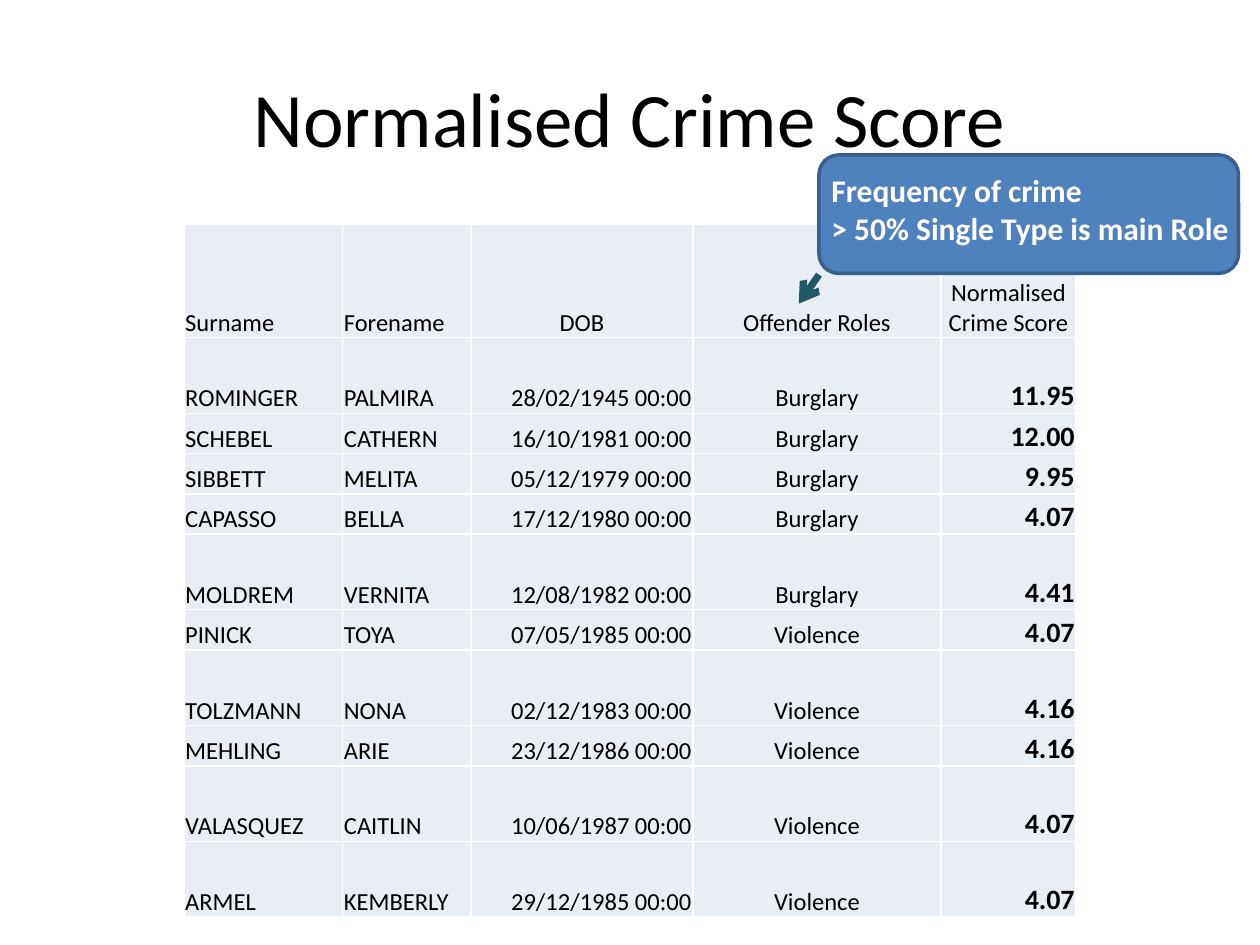
from lxml import etree
from pptx import Presentation
from pptx.dml.color import RGBColor
from pptx.enum.shapes import MSO_CONNECTOR, MSO_SHAPE
from pptx.enum.text import MSO_ANCHOR as ANCHOR, PP_ALIGN as ALIGN
from pptx.oxml.ns import qn
from pptx.util import Inches, Pt


def color(hex_code):
    return RGBColor.from_string(hex_code)


def write(frame, text, size=14, bold=False, ink="000000", align=ALIGN.LEFT):
    """Fill a text frame, one paragraph for each line of text."""
    for index, line in enumerate(text.split("\n")):
        paragraph = frame.add_paragraph() if index else frame.paragraphs[0]
        paragraph.alignment = align
        run = paragraph.add_run()
        run.text = line
        run.font.name = "Calibri"
        run.font.size = Pt(size)
        run.font.bold = bold
        run.font.color.rgb = color(ink)


prs = Presentation()
prs.slide_width, prs.slide_height = Inches(10), Inches(7.5)
slide = prs.slides.add_slide(prs.slide_layouts[6])
shapes = slide.shapes

title = shapes.add_textbox(Inches(0.5), Inches(0.3), Inches(9), Inches(1.25)).text_frame
title.word_wrap = True
title.vertical_anchor = ANCHOR.MIDDLE
write(title, "Normalised Crime Score", size=44, align=ALIGN.CENTER)

# Offender table
HEADER = ["Surname", "Forename", "DOB", "Offender Roles", "Normalised Crime Score"]
OFFENDERS = [
    ("ROMINGER", "PALMIRA", "28/02/1945 00:00", "Burglary", "11.95"),
    ("SCHEBEL", "CATHERN", "16/10/1981 00:00", "Burglary", "12.00"),
    ("SIBBETT", "MELITA", "05/12/1979 00:00", "Burglary", "9.95"),
    ("CAPASSO", "BELLA", "17/12/1980 00:00", "Burglary", "4.07"),
    ("MOLDREM", "VERNITA", "12/08/1982 00:00", "Burglary", "4.41"),
    ("PINICK", "TOYA", "07/05/1985 00:00", "Violence", "4.07"),
    ("TOLZMANN", "NONA", "02/12/1983 00:00", "Violence", "4.16"),
    ("MEHLING", "ARIE", "23/12/1986 00:00", "Violence", "4.16"),
    ("VALASQUEZ", "CAITLIN", "10/06/1987 00:00", "Violence", "4.07"),
    ("ARMEL", "KEMBERLY", "29/12/1985 00:00", "Violence", "4.07"),
]
COLUMN_WIDTHS = [1.26, 1.02, 1.76, 1.97, 1.07]
ROW_HEIGHTS = [0.9, 0.6, 0.32, 0.32, 0.32, 0.6, 0.32, 0.6, 0.32, 0.6, 0.6]
HEADER_ALIGNS = [ALIGN.LEFT, ALIGN.LEFT, ALIGN.CENTER, ALIGN.CENTER, ALIGN.CENTER]
BODY_ALIGNS = [ALIGN.LEFT, ALIGN.LEFT, ALIGN.RIGHT, ALIGN.CENTER, ALIGN.RIGHT]

scores = shapes.add_table(len(ROW_HEIGHTS), len(COLUMN_WIDTHS), Inches(1.46), Inches(1.78),
                          Inches(sum(COLUMN_WIDTHS)), Inches(sum(ROW_HEIGHTS))).table
scores.first_row = scores.horz_banding = False
for column, width in zip(scores.columns, COLUMN_WIDTHS):
    column.width = Inches(width)
for row, height in zip(scores.rows, ROW_HEIGHTS):
    row.height = Inches(height)

for r, record in enumerate([HEADER, *OFFENDERS]):
    aligns = BODY_ALIGNS if r else HEADER_ALIGNS
    for c, (value, align) in enumerate(zip(record, aligns)):
        cell = scores.cell(r, c)
        cell.fill.solid()
        cell.fill.fore_color.rgb = color("E9EDF4")
        cell.vertical_anchor = ANCHOR.BOTTOM
        cell.margin_left = cell.margin_right = cell.margin_top = Inches(0.01)
        cell.margin_bottom = 0
        is_score = r > 0 and c == len(HEADER) - 1
        write(cell.text_frame, value, size=16 if is_score else 14, bold=is_score, align=align)

# Callout on the offender roles column
callout = shapes.add_shape(MSO_SHAPE.ROUNDED_RECTANGLE,
                           Inches(6.5), Inches(1.23), Inches(3.33), Inches(0.94))
callout.shadow.inherit = False
callout.fill.solid()
callout.fill.fore_color.rgb = color("4F81BD")
callout.line.color.rgb = color("3A5F8C")
callout.line.width = Pt(2)

rule = shapes.add_textbox(Inches(6.5), Inches(1.31), Inches(3.38), Inches(0.71)).text_frame
rule.word_wrap = False
write(rule, "Frequency of crime\n> 50% Single Type is main Role", size=18, bold=True, ink="FFFFFF")

pointer = shapes.add_connector(MSO_CONNECTOR.STRAIGHT,
                               Inches(6.5), Inches(2.18), Inches(6.34), Inches(2.41))
pointer.line.color.rgb = color("215968")
pointer.line.width = Pt(4)
etree.SubElement(pointer.line._get_or_add_ln(), qn("a:tailEnd"), type="arrow")
etree.SubElement(pointer._element.spPr, qn("a:effectLst"))

prs.save("out.pptx")
